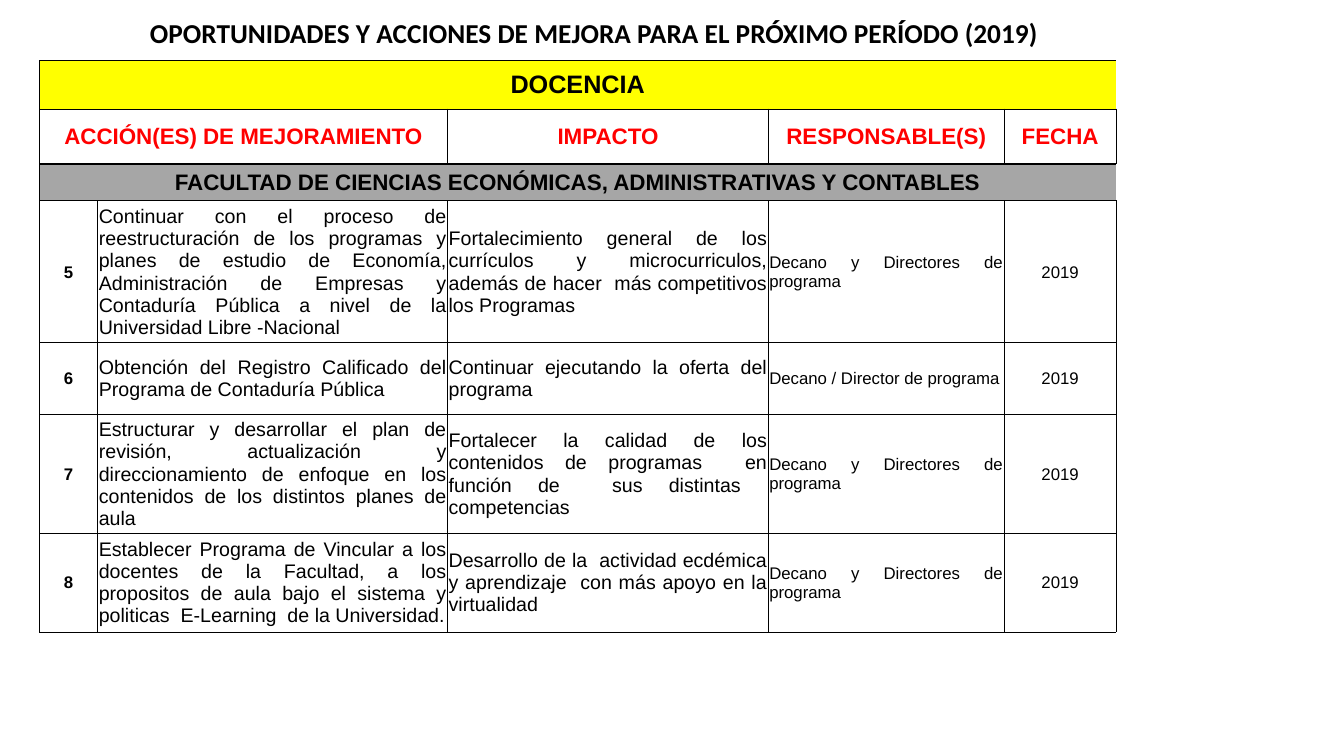
import pptx
import pptx.util
import pptx.dml.color
import pptx.enum.text
import lxml.etree

RGBColor = pptx.dml.color.RGBColor
BLACK = RGBColor(0x00, 0x00, 0x00)
WHITE = RGBColor(0xFF, 0xFF, 0xFF)
RED = RGBColor(0xFF, 0x00, 0x00)
YELLOW = RGBColor(0xFF, 0xFF, 0x00)
GRAY = RGBColor(0xA6, 0xA6, 0xA6)

CENTER = pptx.enum.text.PP_ALIGN.CENTER
JUSTIFY = pptx.enum.text.PP_ALIGN.JUSTIFY
MIDDLE = pptx.enum.text.MSO_ANCHOR.MIDDLE

PX = 9144
COLUMNS = [58, 347, 318, 234, 111]
COLUMN_STYLES = [
    (12, True, CENTER),
    (14, False, JUSTIFY),
    (14, False, JUSTIFY),
    (12, False, JUSTIFY),
    (12, False, CENTER),
]
HEADERS = ["ACCIÓN(ES) DE MEJORAMIENTO", "IMPACTO", "RESPONSABLE(S)", "FECHA"]
FACULTY = "FACULTAD DE CIENCIAS ECONÓMICAS, ADMINISTRATIVAS Y CONTABLES"
DIRECTORS = "Decano  y  Directores  de programa"
ACTIONS = [
    ("5",
     "Continuar con el proceso de reestructuración de los programas y planes de estudio de Economía, "
     "Administración de Empresas y Contaduría Pública a nivel de la Universidad Libre -Nacional",
     "Fortalecimiento general de los currículos y microcurriculos, además de hacer  más competitivos "
     "los Programas",
     DIRECTORS, "2019"),
    ("6",
     "Obtención del Registro Calificado del Programa de Contaduría Pública",
     "Continuar ejecutando la oferta del programa",
     "Decano / Director de programa", "2019"),
    ("7",
     "Estructurar y desarrollar el plan de revisión, actualización y direccionamiento de enfoque en "
     "los contenidos de los distintos planes de aula",
     "Fortalecer la calidad de los contenidos de programas  en función de  sus distintas  competencias",
     DIRECTORS, "2019"),
    ("8",
     "Establecer Programa de Vincular a los docentes de la Facultad, a los propositos de aula bajo el "
     "sistema y politicas  E-Learning  de la Universidad.",
     "Desarrollo de la  actividad ecdémica y aprendizaje  con más apoyo en la virtualidad",
     DIRECTORS, "2019"),
]


def px(n):
    return pptx.util.Emu(n * PX)


def add_text(tf, text, size, bold=True, color=BLACK, align=CENTER, font="Arial"):
    p = tf.paragraphs[0]
    p.alignment = align
    r = p.add_run()
    r.text = text
    r.font.name = font
    r.font.size = pptx.util.Pt(size)
    r.font.bold = bold
    r.font.color.rgb = color


def style_cell(cell, fill, sides="LRTB"):
    cell.vertical_anchor = MIDDLE
    cell.margin_left = cell.margin_right = cell.margin_top = px(1)
    cell.margin_bottom = 0
    tcPr = cell._tc.get_or_add_tcPr()
    for side in "LRTB":
        ln = lxml.etree.SubElement(tcPr, pptx.oxml.ns.qn("a:ln" + side), w="6350")
        if side in sides:
            solid = lxml.etree.SubElement(ln, pptx.oxml.ns.qn("a:solidFill"))
            lxml.etree.SubElement(solid, pptx.oxml.ns.qn("a:srgbClr"), val=str(BLACK))
        else:
            lxml.etree.SubElement(ln, pptx.oxml.ns.qn("a:noFill"))
    cell.fill.solid()
    cell.fill.fore_color.rgb = fill


def add_grid(s, left, top, widths, heights):
    gf = s.shapes.add_table(len(heights), len(widths), px(left), px(top),
                            px(sum(widths)), px(sum(heights)))
    table = gf.table
    table.first_row = False
    table.horz_banding = False
    for column, width in zip(table.columns, widths):
        column.width = px(width)
    for row, height in zip(table.rows, heights):
        row.height = px(height)
    return table


def add_band(table, text, size, fill, right_side):
    last = len(table.columns) - 1
    for i in range(last + 1):
        sides = "TB" + ("L" if i == 0 else "") + ("R" if i == last and right_side else "")
        style_cell(table.cell(0, i), fill, sides)
    table.cell(0, 0).merge(table.cell(0, last))
    add_text(table.cell(0, 0).text_frame, text, size)


def add_title(s, left, top, width, height):
    tf = s.shapes.add_textbox(px(left), px(top), px(width), px(height)).text_frame
    tf.word_wrap = True
    tf.vertical_anchor = MIDDLE
    add_text(tf, "OPORTUNIDADES Y ACCIONES DE MEJORA PARA EL PRÓXIMO PERÍODO (2019)",
             19.5, font="Calibri")


def add_header_table(s, left, top):
    widths = [sum(COLUMNS[:2])] + COLUMNS[2:]
    table = add_grid(s, left, top, widths, [48, 54])
    add_band(table, "DOCENCIA", 18, YELLOW, True)
    for i, text in enumerate(HEADERS):
        cell = table.cell(1, i)
        style_cell(cell, WHITE)
        add_text(cell.text_frame, text, 16, color=RED)


def add_actions_table(s, left, top):
    table = add_grid(s, left, top, COLUMNS, [36, 118, 71, 98, 98])
    add_band(table, FACULTY, 16, GRAY, False)
    for i, action in enumerate(ACTIONS, 1):
        for j, (text, (size, bold, align)) in enumerate(zip(action, COLUMN_STYLES)):
            cell = table.cell(i, j)
            style_cell(cell, WHITE)
            add_text(cell.text_frame, text, size, bold, align=align)


def main():
    prs = pptx.Presentation()
    prs.slide_width = px(1333)
    prs.slide_height = px(750)
    s = prs.slides.add_slide(prs.slide_layouts[6])
    add_title(s, 58, 5, 1063, 55)
    add_actions_table(s, 39, 163)
    add_header_table(s, 39, 60)
    prs.save("out.pptx")


if __name__ == "__main__":
    main()
